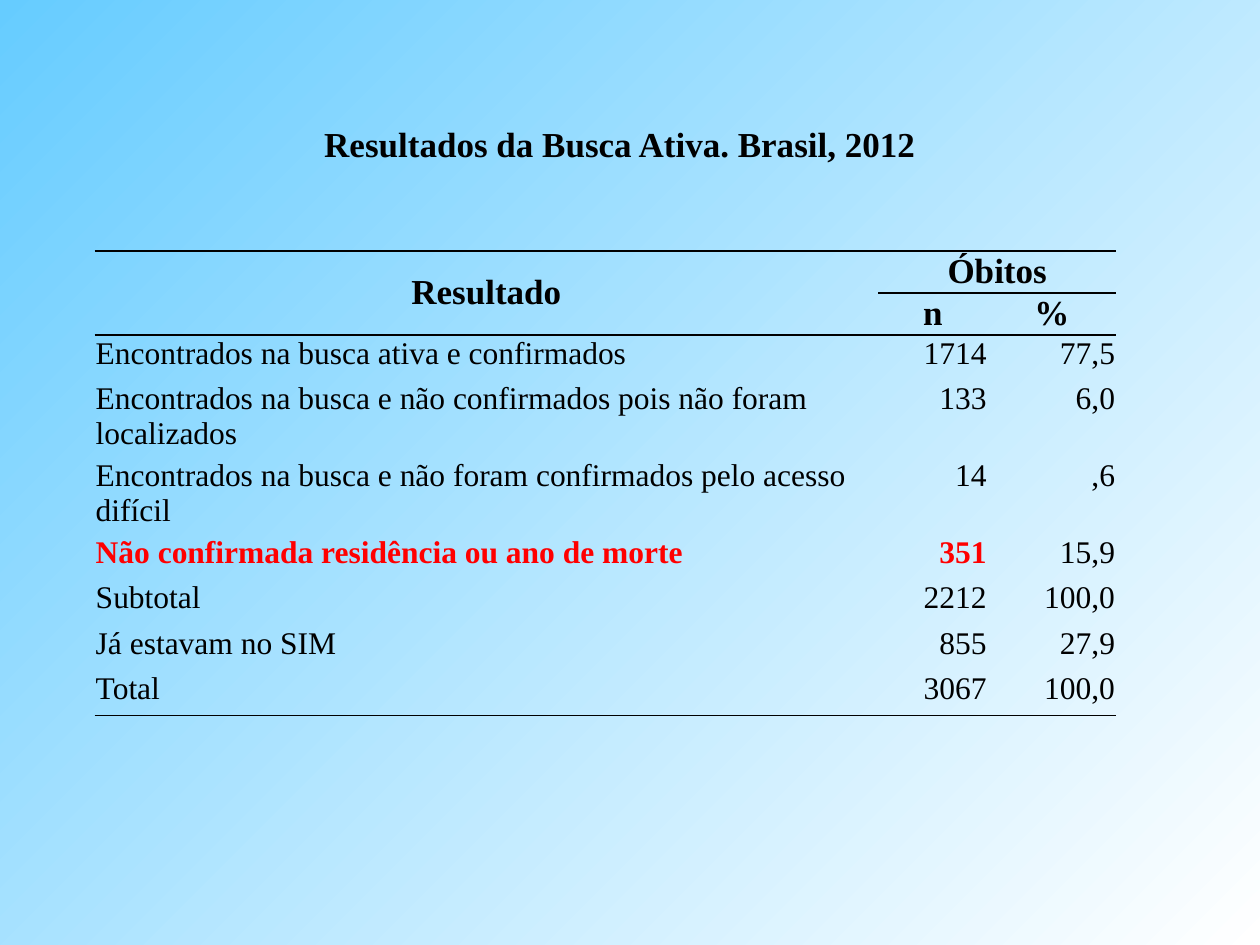
from dataclasses import dataclass

from lxml.etree import SubElement
from pptx import Presentation
from pptx.dml.color import RGBColor
from pptx.enum.text import MSO_ANCHOR, PP_ALIGN
from pptx.oxml.ns import qn
from pptx.util import Inches, Pt


@dataclass(frozen=True)
class Theme:
    """Colours, font and type sizes of the slide."""
    font: str = "Times New Roman"
    heading: int = 20
    body: int = 18
    text: str = "000000"
    alert: str = "FF0000"
    sky: str = "66CCFF"
    white: str = "FFFFFF"
    plain_table: str = "{2D5ABB26-0587-4C30-8999-92F81FD0307C}"


THEME = Theme()
HEADERS = [("Resultado", "Óbitos", ""), ("", "n", "%")]
RESULTS = [
    ("Encontrados na busca ativa e confirmados", "1714", "77,5"),
    ("Encontrados na busca e não confirmados pois não foram localizados", "133", "6,0"),
    ("Encontrados na busca e não foram confirmados pelo acesso difícil", "14", ",6"),
    ("Não confirmada residência ou ano de morte", "351", "15,9"),
    ("Subtotal", "2212", "100,0"),
    ("Já estavam no SIM", "855", "27,9"),
    ("Total", "3067", "100,0"),
]
ALERT_CELLS = {(5, 0), (5, 1)}
COLUMN_WIDTHS = (6.22, 0.87, 1.02)
HEADER_HEIGHT, RESULT_HEIGHT = 0.32, 0.36


def style_paragraph(paragraph, size, color, bold, alignment):
    """Set the font and alignment of a paragraph."""
    font = paragraph.font
    font.name, font.size, font.bold = THEME.font, Pt(size), bold
    font.color.rgb = RGBColor.from_string(color)
    paragraph.alignment = alignment


def set_margins(target, left, top, right, bottom):
    """Set the inner margins of a cell or text frame."""
    target.margin_left, target.margin_top = Inches(left), Inches(top)
    target.margin_right, target.margin_bottom = Inches(right), Inches(bottom)


def set_borders(cell, edges):
    """Draw the named edges of a cell as thin lines and clear the others."""
    properties = cell._tc.get_or_add_tcPr()
    for edge in ("L", "R", "T", "B"):
        line = SubElement(properties, qn(f"a:ln{edge}"), w=str(Pt(1)))
        if edge in edges:
            fill = SubElement(line, qn("a:solidFill"))
            SubElement(fill, qn("a:srgbClr"), val=THEME.text)
        else:
            SubElement(line, qn("a:noFill"))


def fill_background(slide):
    """Fill the slide with a diagonal gradient."""
    fill = slide.background.fill
    fill.gradient()
    fill.gradient_angle = 315
    for stop, position, color in zip(fill.gradient_stops, (0, 1), (THEME.sky, THEME.white)):
        stop.position = position
        stop.color.rgb = RGBColor.from_string(color)


def add_title(slide, left, top, width, height):
    """Place the centred title in the given box."""
    box = slide.shapes.add_textbox(Inches(left), Inches(top), Inches(width), Inches(height))
    box.text_frame.word_wrap = True
    paragraph = box.text_frame.paragraphs[0]
    paragraph.text = "Resultados da Busca Ativa. Brasil, 2012"
    style_paragraph(paragraph, THEME.heading, THEME.text, True, PP_ALIGN.CENTER)


def format_header(cell):
    """Format a heading cell."""
    set_margins(cell, 0.07, 0, 0.07, 0)
    cell.vertical_anchor = MSO_ANCHOR.MIDDLE
    paragraph = cell.text_frame.paragraphs[0]
    paragraph.space_before = paragraph.space_after = Pt(3)
    style_paragraph(paragraph, THEME.heading, THEME.text, True, PP_ALIGN.CENTER)


def format_result(cell, column, alert):
    """Format a result cell, with numbers to the right."""
    set_margins(cell, 0.01, 0.01, 0.01, 0)
    alignment = PP_ALIGN.RIGHT if column else PP_ALIGN.LEFT
    color = THEME.alert if alert else THEME.text
    style_paragraph(cell.text_frame.paragraphs[0], THEME.body, color, alert, alignment)


def add_results_table(slide, left, top, width, height):
    """Place the table of results in the given box."""
    rows = HEADERS + RESULTS
    frame = slide.shapes.add_table(len(rows), len(COLUMN_WIDTHS), Inches(left), Inches(top),
                                   Inches(width), Inches(height))
    table = frame.table
    table.first_row = table.horz_banding = False
    table._tbl.tblPr.find(qn("a:tableStyleId")).text = THEME.plain_table
    for column, column_width in zip(table.columns, COLUMN_WIDTHS):
        column.width = Inches(column_width)
    table.cell(0, 0).merge(table.cell(1, 0))
    table.cell(0, 1).merge(table.cell(0, 2))

    for row, values in enumerate(rows):
        is_header = row < len(HEADERS)
        table.rows[row].height = Inches(HEADER_HEIGHT if is_header else RESULT_HEIGHT)
        for column, value in enumerate(values):
            cell = table.cell(row, column)
            if value:
                cell.text = value
            if is_header:
                format_header(cell)
            else:
                format_result(cell, column, (row, column) in ALERT_CELLS)
            has_top = row <= len(HEADERS) and (row, column) != (1, 0)
            has_bottom = is_header or row == len(rows) - 1
            set_borders(cell, "T" * has_top + "B" * has_bottom)
            cell.fill.background()


def main():
    """Build and save the presentation."""
    presentation = Presentation()
    presentation.slide_width, presentation.slide_height = Inches(10), Inches(7.5)
    slide = presentation.slides.add_slide(presentation.slide_layouts[6])
    fill_background(slide)
    add_title(slide, 0.04, 0.92, 9.76, 0.44)
    add_results_table(slide, 0.75, 1.99, 8.11, 3.68)
    presentation.save("out.pptx")


if __name__ == "__main__":
    main()
